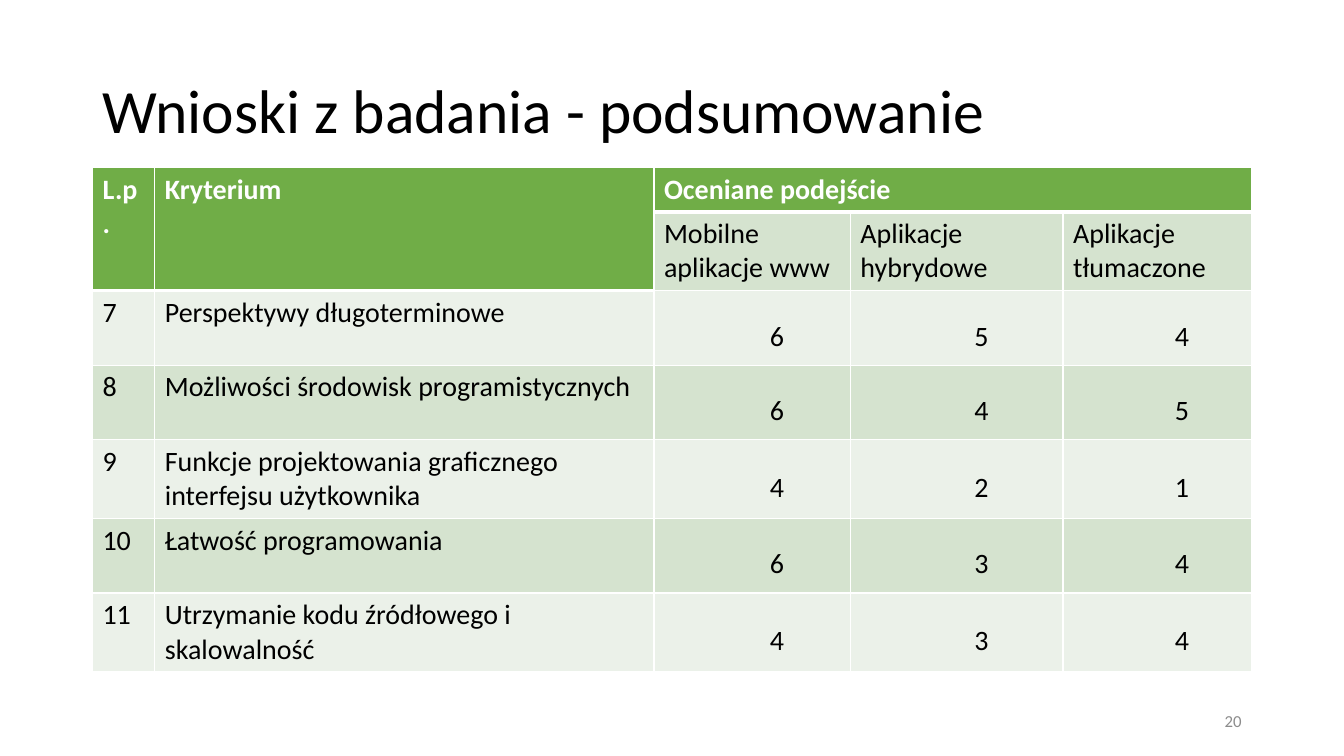
from lxml.etree import SubElement
from pptx import Presentation
from pptx.dml.color import RGBColor
from pptx.enum.text import MSO_ANCHOR, PP_ALIGN
from pptx.oxml.ns import qn
from pptx.util import Cm, Pt

FONT = "Calibri"
BLACK = RGBColor(0x00, 0x00, 0x00)
WHITE = RGBColor(0xFF, 0xFF, 0xFF)
GRAY = RGBColor(0x8C, 0x8C, 0x8C)
GREEN = RGBColor(0x70, 0xAD, 0x47)
BAND_DARK = RGBColor(0xD5, 0xE3, 0xCF)
BAND_LIGHT = RGBColor(0xEB, 0xF1, 0xE9)

COLUMN_WIDTHS = (1.57, 12.58, 4.95, 5.36, 4.75)
HEADER_HEIGHT = 0.94
CRITERION_HEIGHT = 1.88
HEADER_ROWS = 2
LABEL_COLUMNS = 2

ROWS = (
    ("L.p.", "Kryterium", "Oceniane podejście", "", ""),
    ("", "", "Mobilne aplikacje www", "Aplikacje hybrydowe", "Aplikacje tłumaczone"),
    ("7", "Perspektywy długoterminowe", "6", "5", "4"),
    ("8", "Możliwości środowisk programistycznych", "6", "4", "5"),
    ("9", "Funkcje projektowania graficznego interfejsu użytkownika", "4", "2", "1"),
    ("10", "Łatwość programowania", "6", "3", "4"),
    ("11", "Utrzymanie kodu źródłowego i skalowalność", "4", "3", "4"),
)


def add_run(paragraph, text, size, color, bold=False):
    run = paragraph.add_run()
    run.text = text
    run.font.name = FONT
    run.font.size = Pt(size)
    run.font.bold = bold
    run.font.color.rgb = color


def fill_title(title, left, top, width, height):
    title.left, title.top, title.width, title.height = left, top, width, height
    title.text_frame.vertical_anchor = MSO_ANCHOR.MIDDLE
    paragraph = title.text_frame.paragraphs[0]
    paragraph.alignment = PP_ALIGN.LEFT
    paragraph.line_spacing = 0.9
    add_run(paragraph, "Wnioski z badania - podsumowanie", 44, BLACK)


def is_header(row, column):
    return row == 0 or (row == 1 and column < LABEL_COLUMNS)


def set_borders(cell, top, bottom):
    """Draw white borders; top and bottom are widths in points."""
    properties = cell._tc.get_or_add_tcPr()
    for side, width in (("L", 1), ("R", 1), ("T", top), ("B", bottom)):
        line = SubElement(properties, qn(f"a:ln{side}"), w=str(Pt(width)))
        fill = SubElement(line, qn("a:solidFill"))
        SubElement(fill, qn("a:srgbClr"), val=str(WHITE))


def format_score(cell):
    cell.vertical_anchor = MSO_ANCHOR.MIDDLE
    cell.margin_left = cell.margin_right = Cm(0.18)
    cell.margin_top = cell.margin_bottom = 0
    paragraph = cell.text_frame.paragraphs[0]
    paragraph.alignment = PP_ALIGN.CENTER
    paragraph.line_spacing = 1.5
    paragraph._p.get_or_add_pPr().set("indent", str(Cm(1.25)))


def fill_cell(cell, row, column, text):
    header = is_header(row, column)
    below_header = row > 0 and is_header(row - 1, column)
    set_borders(cell, 3 if below_header else 1, 3 if header else 1)
    cell.fill.solid()
    band = BAND_DARK if row % 2 else BAND_LIGHT
    cell.fill.fore_color.rgb = GREEN if header else band
    if row >= HEADER_ROWS and column >= LABEL_COLUMNS:
        format_score(cell)
    if text:
        paragraph = cell.text_frame.paragraphs[0]
        add_run(paragraph, text, 20, WHITE if header else BLACK, header)


def add_score_table(slide, left, top, width, height):
    frame = slide.shapes.add_table(
        len(ROWS), len(COLUMN_WIDTHS), left, top, width, height)
    table = frame.table
    for column, share in zip(table.columns, COLUMN_WIDTHS):
        column.width = int(width * share / sum(COLUMN_WIDTHS))
    for index, texts in enumerate(ROWS):
        table.rows[index].height = Cm(
            HEADER_HEIGHT if index < HEADER_ROWS else CRITERION_HEIGHT)
        for column, text in enumerate(texts):
            fill_cell(table.cell(index, column), index, column, text)
    for column in range(LABEL_COLUMNS):
        table.cell(0, column).merge(table.cell(1, column))
    table.cell(0, LABEL_COLUMNS).merge(table.cell(0, len(COLUMN_WIDTHS) - 1))


def add_slide_number(slide, left, top, width, height):
    text_frame = slide.shapes.add_textbox(left, top, width, height).text_frame
    text_frame.word_wrap = True
    text_frame.vertical_anchor = MSO_ANCHOR.MIDDLE
    paragraph = text_frame.paragraphs[0]
    paragraph.alignment = PP_ALIGN.RIGHT
    add_run(paragraph, "20", 12, GRAY)


def main():
    presentation = Presentation()
    presentation.slide_width = Cm(33.87)
    presentation.slide_height = Cm(19.05)
    slide = presentation.slides.add_slide(presentation.slide_layouts[5])
    left, width = Cm(2.33), Cm(29.21)
    number_width = Cm(7.62)
    fill_title(slide.shapes.title, left, Cm(1.01), width, Cm(3.68))
    add_score_table(slide, left, Cm(4.22), width, Cm(12.62))
    add_slide_number(
        slide, left + width - number_width, Cm(17.66), number_width, Cm(1.01))
    presentation.save("out.pptx")


if __name__ == "__main__":
    main()
